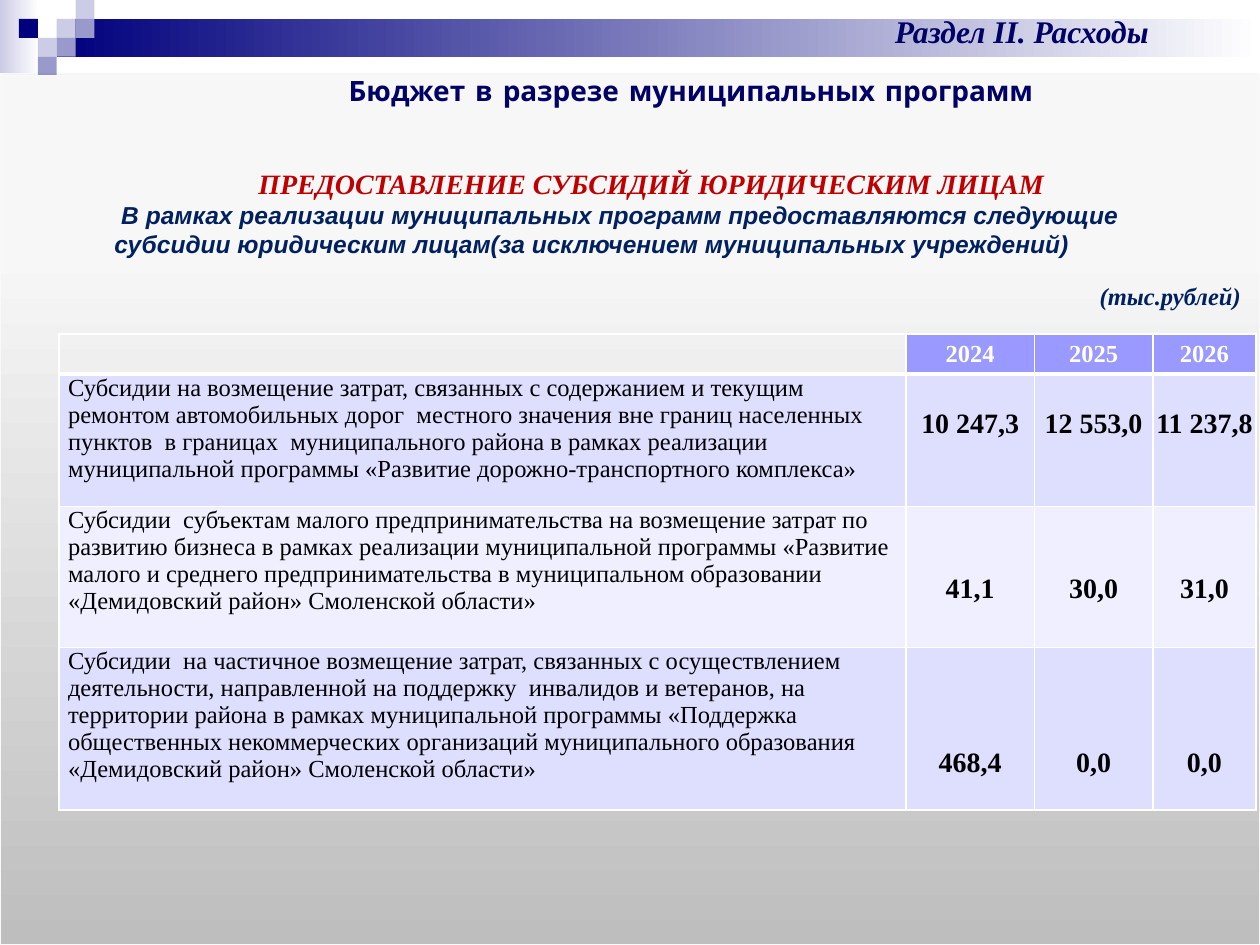
from lxml import etree
from pptx import Presentation
from pptx.dml.color import RGBColor
from pptx.enum.shapes import MSO_SHAPE
from pptx.enum.text import MSO_ANCHOR, MSO_AUTO_SIZE, PP_ALIGN
from pptx.oxml.ns import qn
from pptx.util import Inches, Pt

RECT, PANEL = MSO_SHAPE.RECTANGLE, MSO_SHAPE.FLOWCHART_PROCESS
LEFT, CENTER = PP_ALIGN.LEFT, PP_ALIGN.CENTER
TOP, MIDDLE = MSO_ANCHOR.TOP, MSO_ANCHOR.MIDDLE
NO_FIT = MSO_AUTO_SIZE.NONE

THEME = {
    "navy": "00007D", "pale": "CCCCE6", "lilac": "9999CC", "white": "FFFFFF",
    "heading": "000066", "red": "C00000", "blue": "002060", "black": "000000",
    "header": "9999FF", "bands": ("DEDEFF", "EFEFFF"), "edge": "F9F9F9",
    "panel": ((0, "BEBEBE"), (80, "F7F7F7"), (100, "F8F8F8")),
    "serif": "Times New Roman", "sans": "Arial", "comic": "Comic Neue",
    "section": 18, "large": 16, "small": 14,
}
W, H = 10, 7.5
U = 0.15  # module of the corner mosaic


def add_block(shape, x, y, w, h, stops, angle=0):
    """Add a shape with a plain fill (a colour) or a gradient (a list of stops)."""
    sp = s.shapes.add_shape(shape, Inches(x), Inches(y), Inches(w), Inches(h))
    sp.shadow.inherit = False
    sp.line.fill.background()
    if isinstance(stops, str):
        sp.fill.solid()
        sp.fill.fore_color.rgb = RGBColor.from_string(stops)
        return sp
    sp.fill.gradient()
    sp.fill.gradient_angle = angle
    gs_list = sp.element.spPr.find(".//" + qn("a:gsLst"))
    for gs in list(gs_list):
        gs_list.remove(gs)
    for pos, color in stops:
        gs = etree.SubElement(gs_list, qn("a:gs"), pos=str(pos * 1000))
        etree.SubElement(gs, qn("a:srgbClr"), val=color)
    return sp


def write(p, text, size, font, color, bold=True, italic=False, align=CENTER):
    """Fill a paragraph and format its run."""
    p.text = text
    p.alignment = align
    f = p.runs[0].font
    f.size, f.name, f.bold, f.italic = Pt(size), font, bold, italic
    f.color.rgb = RGBColor.from_string(color)


prs = Presentation()
prs.slide_width, prs.slide_height = Inches(W), Inches(H)
s = prs.slides.add_slide(prs.slide_layouts[5])

# Top band and corner mosaic
add_block(RECT, 0, 0, 0.31, 0.58, [(0, THEME["pale"]), (100, THEME["white"])])
add_block(RECT, 3 * U, U, W - 3 * U, 2 * U, [(0, THEME["navy"]), (100, THEME["white"])])
mosaic = [(3, 1, "pale"), (4, 0, "pale"), (4, 1, "lilac"), (2, 2, "pale"),
          (1, 1, "navy"), (3, 2, "lilac"), (2, 3, "lilac")]
for col, row, color in mosaic:
    add_block(RECT, col * U, row * U, U, U, THEME[color])

# Grey panel with a soft shadow
panel = add_block(PANEL, 0, 4 * U, W, H - 4 * U, THEME["panel"], 90)
panel.line.color.rgb = RGBColor.from_string(THEME["edge"])
panel.line.width = Pt(0.75)
effects = panel.element.spPr.find(qn("a:effectLst"))
shadow = etree.SubElement(effects, qn("a:outerShdw"), blurRad=str(Pt(3.1)),
                          dist=str(Pt(1.8)), dir="5400000", rotWithShape="0")
tint = etree.SubElement(shadow, qn("a:srgbClr"), val=THEME["black"])
etree.SubElement(tint, qn("a:alpha"), val="35000")

# Table of subsidies: text, three yearly values, lines the values are lowered by
years = ["2024", "2025", "2026"]
subsidies = [
    ("Субсидии на возмещение затрат, связанных с содержанием и текущим ремонтом "
     "автомобильных дорог  местного значения вне границ населенных пунктов  в границах  "
     "муниципального района в рамках реализации муниципальной программы «Развитие "
     "дорожно-транспортного комплекса»", "10 247,3", "12 553,0", "11 237,8"),
    ("Субсидии  субъектам малого предпринимательства на возмещение затрат по развитию "
     "бизнеса в рамках реализации муниципальной программы «Развитие малого и среднего "
     "предпринимательства в муниципальном образовании «Демидовский район» Смоленской "
     "области»", "41,1", "30,0", "31,0"),
    ("Субсидии  на частичное возмещение затрат, связанных с осуществлением деятельности, "
     "направленной на поддержку  инвалидов и ветеранов, на территории района в рамках "
     "муниципальной программы «Поддержка общественных некоммерческих организаций "
     "муниципального образования «Демидовский район» Смоленской области»",
     "468,4", "0,0", "0,0"),
]
col_widths = [6.72, 1.02, 0.94, 0.82]
row_heights = [0.32, 1.05, 1.12, 1.29]
table = s.shapes.add_table(len(row_heights), len(col_widths), Inches(0.47), Inches(2.65),
                           Inches(sum(col_widths)), Inches(sum(row_heights))).table
for column, width in zip(table.columns, col_widths):
    column.width = Inches(width)
for row, height in zip(table.rows, row_heights):
    row.height = Inches(height)

for i, values in enumerate([("", *years), *subsidies]):
    for j, value in enumerate(values):
        cell = table.cell(i, j)
        # White borders, heavier below the header
        tc_pr = cell._tc.get_or_add_tcPr()
        for side in "LRTB":
            heavy = (i, side) in ((0, "B"), (1, "T"))
            ln = etree.SubElement(tc_pr, qn("a:ln" + side), w=str(Pt(3 if heavy else 1)))
            fill = etree.SubElement(ln, qn("a:solidFill"))
            etree.SubElement(fill, qn("a:srgbClr"), val=THEME["white"])
        if value:
            cell.fill.solid()
            color = THEME["bands"][(i - 1) % 2] if i else THEME["header"]
            cell.fill.fore_color.rgb = RGBColor.from_string(color)
        else:
            cell.fill.background()
        # Text: header, description or lowered value
        side_margin = 0.07 if j == 0 else 0.01
        cell.margin_left = cell.margin_right = Inches(side_margin)
        cell.margin_top = Inches(0.01 + 0.26 * i if i and j else 0)
        cell.margin_bottom = 0
        cell.vertical_anchor = TOP if i else MIDDLE
        if value:
            size = THEME["large"] if i and j else THEME["small"]
            write(cell.text_frame.paragraphs[0], value, size, THEME["serif"],
                  THEME["black"] if i else THEME["white"],
                  bold=j > 0, align=CENTER if j else LEFT)

# Introduction with first-line indents
tf = s.shapes.add_textbox(Inches(0.31), Inches(1.27), Inches(9.22), Inches(0.91)).text_frame
tf.word_wrap = True
intro = [
    ("ПРЕДОСТАВЛЕНИЕ СУБСИДИЙ ЮРИДИЧЕСКИМ ЛИЦАМ", "large", "serif", "red", CENTER),
    (" В рамках реализации муниципальных программ предоставляются следующие",
     "small", "sans", "blue", LEFT),
    ("субсидии юридическим лицам(за исключением муниципальных учреждений)",
     "small", "sans", "blue", LEFT),
]
for n, (text, size, font, color, align) in enumerate(intro):
    p = tf.add_paragraph() if n else tf.paragraphs[0]
    write(p, text, THEME[size], THEME[font], THEME[color], italic=True, align=align)
    p._p.get_or_add_pPr().set("indent", str(Inches(0.5)))

# Unit and section labels
labels = [
    ("(тыс.рублей)", 8.63, 2.18, 1.33, 0.34, "small", "blue", LEFT, False),
    ("Раздел II. Расходы", 6.26, 0.05, 3.7, 0.4, "section", "heading", CENTER, True),
]
for text, x, y, w, h, size, color, align, wrap in labels:
    tf = s.shapes.add_textbox(Inches(x), Inches(y), Inches(w), Inches(h)).text_frame
    tf.word_wrap = wrap
    write(tf.paragraphs[0], text, THEME[size], THEME["serif"], THEME[color],
          italic=True, align=align)

# Title, brought in front of the panel
title = s.shapes.title
title.element.getparent().append(title.element)
title.left, title.top = Inches(2.24), Inches(0.53)
title.width, title.height = Inches(6.49), Inches(0.37)
tf = title.text_frame
tf.auto_size, tf.vertical_anchor, tf.word_wrap = NO_FIT, TOP, True
write(tf.paragraphs[0], "Бюджет в разрезе муниципальных программ",
      THEME["large"], THEME["comic"], THEME["heading"])

prs.save("out.pptx")
